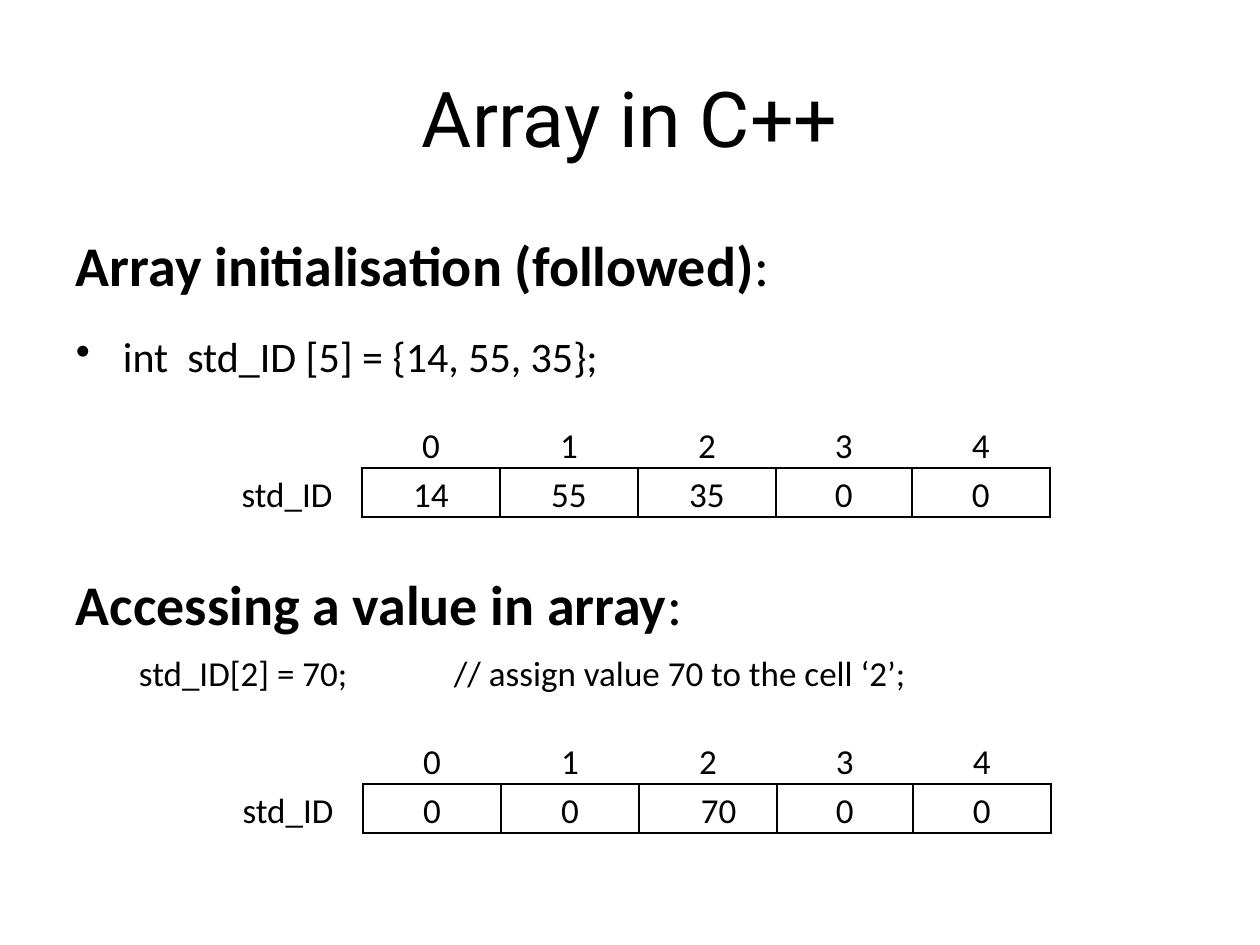
import pptx
import pptx.dml.color
import pptx.enum.text
import pptx.oxml
import pptx.oxml.ns
import pptx.util

BLACK = pptx.dml.color.RGBColor(0x00, 0x00, 0x00)
ALIGN = pptx.enum.text.PP_ALIGN
ANCHOR = pptx.enum.text.MSO_ANCHOR
EMU_PER_PX = 914400 / 126

TEXT_LEFT, TEXT_WIDTH = 76, 1109
ROW_HEIGHT = 49
COLUMN_WIDTHS = [150, 138, 138, 138, 136, 138]


def px(n):
    return pptx.util.Emu(round(n * EMU_PER_PX))


class Deck:
    """Holds the text style and the current slide."""

    font = "Calibri"
    color = BLACK

    def __init__(self, width, height):
        self.prs = pptx.Presentation()
        self.prs.slide_width, self.prs.slide_height = px(width), px(height)
        self.s = self.prs.slides.add_slide(self.prs.slide_layouts[6])

    def style(self, p, size, font=None):
        p.font.size = pptx.util.Pt(size)
        p.font.name = font or self.font
        p.font.color.rgb = self.color

    def text(self, x, y, w, h, runs, size, font=None, align=ALIGN.LEFT, anchor=ANCHOR.TOP):
        """Add a one-paragraph text box; runs are (text, bold) pairs."""
        tf = self.s.shapes.add_textbox(px(x), px(y), px(w), px(h)).text_frame
        tf.word_wrap = True
        tf.vertical_anchor = anchor
        tf.margin_left = tf.margin_right = tf.margin_top = tf.margin_bottom = 0
        p = tf.paragraphs[0]
        p.alignment = align
        self.style(p, size, font)
        for words, bold in runs:
            r = p.add_run()
            r.text = words
            r.font.bold = bold
        return p

    def heading(self, y, words):
        self.text(TEXT_LEFT, y, TEXT_WIDTH, 68, [(words, True), (":", False)], 32)

    def bullet(self, y, words):
        p = self.text(TEXT_LEFT, y, TEXT_WIDTH, 51, [(words, False)], 24)
        pPr = p._p.get_or_add_pPr()
        self.indent(p, 47)
        pPr.set("indent", str(-px(47)))
        bullet = pptx.oxml.parse_xml(f'<a:buChar {pptx.oxml.ns.nsdecls("a")} char="•"/>')
        pPr.find(pptx.oxml.ns.qn("a:defRPr")).addprevious(bullet)

    def indent(self, p, n):
        p._p.get_or_add_pPr().set("marL", str(px(n)))

    def borders(self, cell, edges):
        """Draw the named edges (letters of LRTB) and clear the others."""
        tcPr = cell._tc.get_or_add_tcPr()
        for edge in "LRTB":
            fill = f'<a:solidFill><a:srgbClr val="{BLACK}"/></a:solidFill>' if edge in edges else "<a:noFill/>"
            tcPr.append(pptx.oxml.parse_xml(
                f'<a:ln{edge} {pptx.oxml.ns.nsdecls("a")} w="{pptx.util.Pt(1)}">{fill}</a:ln{edge}>'))

    def array(self, x, y, name, values, indented=None):
        """Add an array table: indices above bordered value cells."""
        rows = [["", *range(len(values))], [name, *values]]
        table = self.s.shapes.add_table(
            2, len(COLUMN_WIDTHS), px(x), px(y), px(sum(COLUMN_WIDTHS)), px(2 * ROW_HEIGHT)).table
        table.first_row = table.horz_banding = False
        for column, width in zip(table.columns, COLUMN_WIDTHS):
            column.width = px(width)
        for i, row in enumerate(rows):
            table.rows[i].height = px(ROW_HEIGHT)
            for j, value in enumerate(row):
                cell = table.cell(i, j)
                cell.margin_left = cell.margin_right = px(9)
                cell.margin_top = cell.margin_bottom = 0
                p = cell.text_frame.paragraphs[0]
                p.text = str(value)
                p.alignment = ALIGN.CENTER
                p.line_spacing = 1.15
                self.style(p, 20)
                if i == 1 and j > 0 and j - 1 == indented:
                    p.alignment = ALIGN.LEFT
                    self.indent(p, 53)
                if j == 0:
                    edges = "R" if i else ""
                else:
                    edges = "LRTB" if i else "B"
                self.borders(cell, edges)
                cell.fill.background()


def main():
    deck = Deck(1260, 945)
    deck.text(63, 38, 1134, 158, [("Array in C++", False)], 44, "Roboto", ALIGN.CENTER, ANCHOR.MIDDLE)

    deck.heading(230, "Array initialisation (followed)")
    deck.bullet(331, "int  std_ID [5] = {14, 55, 35};")
    deck.array(212, 419, "std_ID", [14, 55, 35, 0, 0])

    deck.heading(570, "Accessing a value in array")
    deck.text(TEXT_LEFT, 651, TEXT_WIDTH, 43,
              [("\tstd_ID[2] = 70;\t\t// assign value 70 to the cell ‘2’;", False)], 20)
    deck.array(213, 735, "std_ID", [0, 0, 70, 0, 0], indented=2)

    deck.prs.save("out.pptx")


if __name__ == "__main__":
    main()
